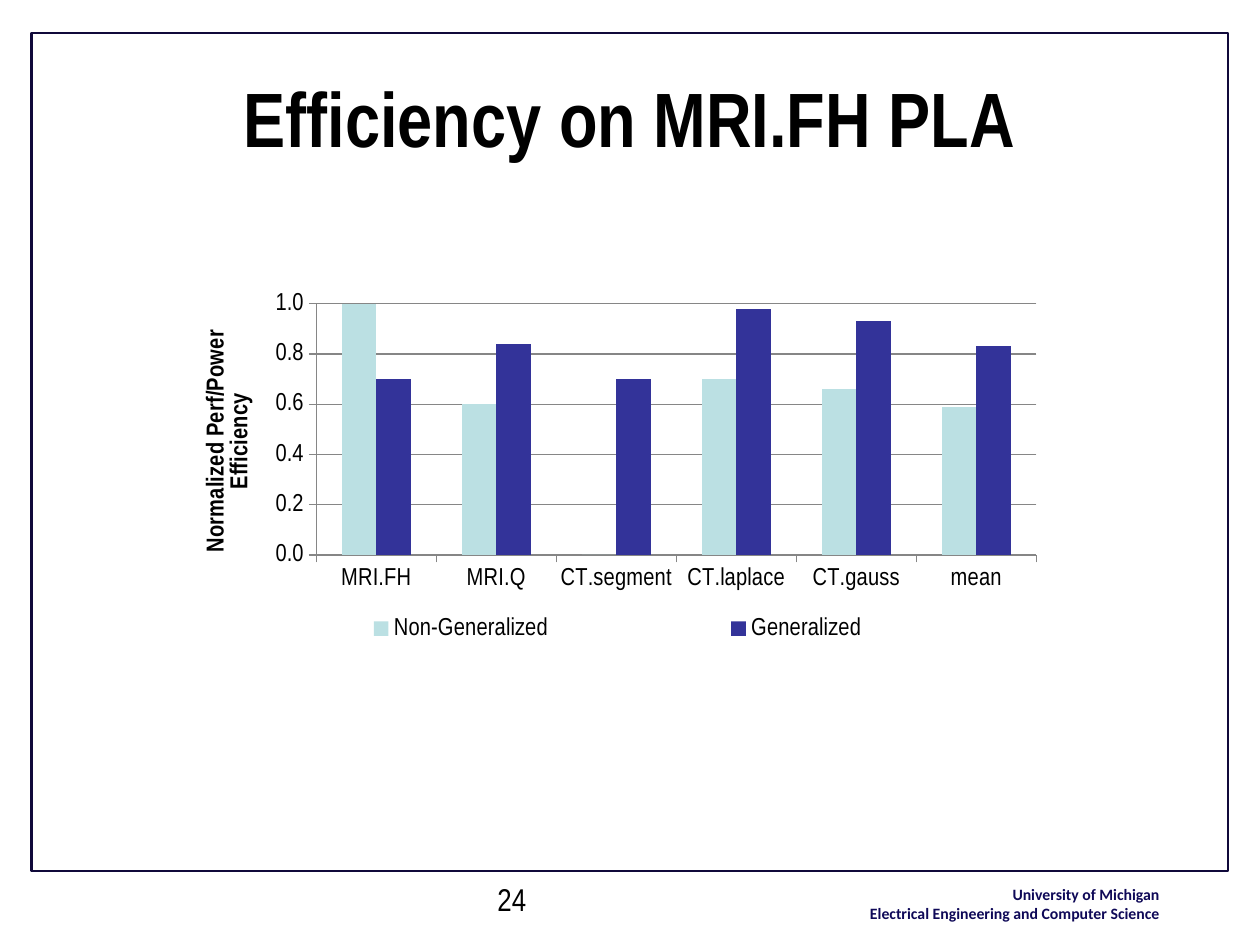
"""Build the efficiency slide with its clustered column chart."""
from lxml import etree
from pptx import Presentation
from pptx.chart.data import CategoryChartData
from pptx.dml.color import RGBColor
from pptx.enum.chart import XL_CHART_TYPE, XL_LEGEND_POSITION, XL_TICK_MARK
from pptx.enum.shapes import MSO_SHAPE
from pptx.enum.text import MSO_ANCHOR, PP_ALIGN
from pptx.oxml.ns import qn
from pptx.util import Inches, Pt

BLACK = RGBColor(0x00, 0x00, 0x00)
NAVY = RGBColor(0x0F, 0x09, 0x58)
FRAME = RGBColor(0x10, 0x09, 0x3A)
GREY = RGBColor(0x86, 0x86, 0x86)
PALE = RGBColor(0xBB, 0xE0, 0xE3)
INDIGO = RGBColor(0x33, 0x33, 0x99)
WHITE = RGBColor(0xFF, 0xFF, 0xFF)

COLUMNS = XL_CHART_TYPE.COLUMN_CLUSTERED
BOTTOM = XL_LEGEND_POSITION.BOTTOM
TICK_OUT, TICK_NONE = XL_TICK_MARK.OUTSIDE, XL_TICK_MARK.NONE
RECTANGLE = MSO_SHAPE.RECTANGLE
LEFT, CENTER, RIGHT = PP_ALIGN.LEFT, PP_ALIGN.CENTER, PP_ALIGN.RIGHT
MIDDLE = MSO_ANCHOR.MIDDLE

CATEGORIES = ["MRI.FH", "MRI.Q", "CT.segment", "CT.laplace", "CT.gauss", "mean"]
SERIES = [
    ("Non-Generalized", [1, 0.6, 0, 0.7, 0.66, 0.59], PALE),
    ("Generalized", [0.7, 0.84, 0.7, 0.98, 0.93, 0.83], INDIGO),
]


class SlideBuilder:
    """Hold the style and current page; places are shares of the slide's size."""

    face = "Arial Narrow"
    label_size = 14

    def __init__(self, deck):
        self.deck = deck
        self.page = deck.slides.add_slide(deck.slide_layouts[5])
        self.page.background.fill.solid()
        self.page.background.fill.fore_color.rgb = WHITE

    def place(self, left, top, width, height):
        across, down = self.deck.slide_width, self.deck.slide_height
        return [round(share * side) for share, side in
                zip((left, top, width, height), (across, down, across, down))]

    def style(self, font, size, color=BLACK, bold=False, face=None):
        font.name = face or self.face
        font.size = Pt(size)
        font.bold = bold
        font.color.rgb = color

    def add_lines(self, frame, lines, align, size, **look):
        for index, line in enumerate(lines):
            para = frame.add_paragraph() if index else frame.paragraphs[0]
            para.alignment = align
            span = para.add_run()
            span.text = line
            self.style(span.font, size, **look)

    def title(self, place, line):
        box = self.page.shapes.title
        box.left, box.top, box.width, box.height = self.place(*place)
        box.text_frame.vertical_anchor = MIDDLE
        self.add_lines(box.text_frame, [line], CENTER, 44, bold=True)

    def text(self, place, lines, align, size, wrap=True, **look):
        box = self.page.shapes.add_textbox(*self.place(*place))
        box.text_frame.word_wrap = wrap
        self.add_lines(box.text_frame, lines, align, size, **look)

    def frame(self, place):
        border = self.page.shapes.add_shape(RECTANGLE, *self.place(*place))
        border.shadow.inherit = False
        border.fill.background()
        border.line.color.rgb = FRAME
        border.line.width = Pt(1.25)

    def layout(self, element, left, top, width, height, inner=False):
        layout = element.find(qn("c:layout"))
        if layout is None:
            layout = etree.Element(qn("c:layout"))
            position = element.find(qn("c:legendPos"))
            if position is None:
                element.insert(0, layout)
            else:
                position.addnext(layout)
        manual = etree.SubElement(layout, qn("c:manualLayout"))
        settings = [("layoutTarget", "inner")] if inner else []
        settings += [("xMode", "edge"), ("yMode", "edge"),
                     ("x", left), ("y", top), ("w", width), ("h", height)]
        for name, value in settings:
            etree.SubElement(manual, qn(f"c:{name}")).set("val", str(value))

    def axis(self, axis):
        axis.major_tick_mark = TICK_OUT
        axis.minor_tick_mark = TICK_NONE
        axis.format.line.color.rgb = GREY
        self.style(axis.tick_labels.font, self.label_size)

    def chart(self, place, categories, series, axis_title):
        data = CategoryChartData(number_format="0.0")
        data.categories = categories
        for name, values, _ in series:
            data.add_series(name, values)
        chart = self.page.shapes.add_chart(COLUMNS, *self.place(*place), data).chart
        self.style(chart.font, 10)
        chart.has_title = False
        plot = chart.plots[0]
        plot.vary_by_categories = False
        plot.gap_width = 150
        for column, (_, _, color) in zip(plot.series, series):
            column.format.fill.solid()
            column.format.fill.fore_color.rgb = color
        self.axis(chart.category_axis)
        scale = chart.value_axis
        self.axis(scale)
        scale.minimum_scale, scale.maximum_scale, scale.major_unit = 0, 1, 0.2
        scale.major_gridlines.format.line.color.rgb = GREY
        scale.tick_labels.number_format = "0.0"
        scale.tick_labels.number_format_is_linked = False
        self.add_lines(scale.axis_title.text_frame, axis_title, CENTER,
                       self.label_size, bold=True)
        chart.has_legend = True
        chart.legend.position = BOTTOM
        chart.legend.include_in_layout = True
        self.style(chart.legend.font, self.label_size)
        chart_space = chart.plots[0].series[0].format.fill and chart.element \
            if hasattr(chart, "element") else chart._chartSpace
        plot_area = chart_space.find(".//" + qn("c:plotArea"))
        legend = chart_space.find(".//" + qn("c:legend"))
        self.layout(plot_area, 0.14, 0.03, 0.86, 0.7, inner=True)
        self.layout(legend, 0, 0.88, 1, 0.11)


def main():
    deck = Presentation()
    deck.slide_width, deck.slide_height = Inches(10), Inches(7.5)
    slide = SlideBuilder(deck)
    slide.text((0.64, 0.93, 0.29, 0.05),
               ["University of Michigan", "Electrical Engineering and Computer Science"],
               RIGHT, 9, wrap=False, color=NAVY, bold=True, face="Calibri")
    slide.frame((0.025, 0.035, 0.95, 0.887))
    slide.text((0.385, 0.925, 0.233, 0.06), ["24"], LEFT, 18)
    slide.title((0.05, 0.04, 0.9, 0.167), "Efficiency on MRI.FH PLA")
    slide.chart((0.158, 0.309, 0.665, 0.381), CATEGORIES, SERIES,
                ["Normalized Perf/Power", "Efficiency"])
    deck.save("out.pptx")


if __name__ == "__main__":
    main()
